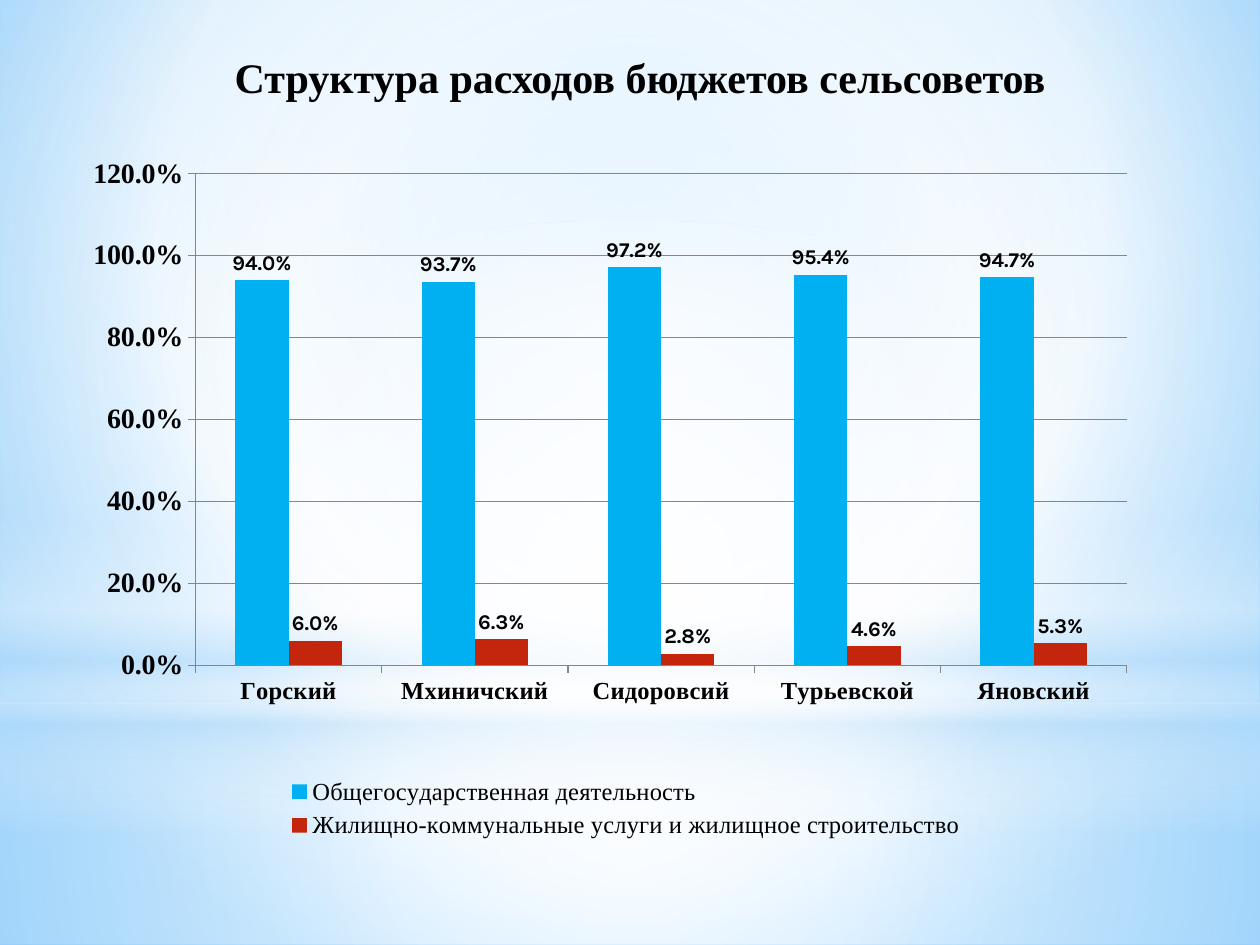
from dataclasses import dataclass

import pptx
import pptx.chart.data
import pptx.dml.color
import pptx.enum.chart
import pptx.enum.shapes
import pptx.enum.text
import pptx.oxml
import pptx.oxml.ns
import pptx.util
from pptx.util import Inches

qn = pptx.oxml.ns.qn


@dataclass(frozen=True)
class Theme:
    serif: str = "Times New Roman"
    sans: str = "Karla"
    ink: str = "000000"
    grid: str = "868686"
    bars: tuple = ("00B0F0", "C3260C")
    white: str = "FFFFFF"
    pale: str = "B4DCFA"
    sky: str = "9ED5FF"
    deep: str = "5BB9FF"
    head: int = 24
    scale: int = 16
    label: int = 14
    value: int = 12
    base: int = 10


THEME = Theme()
PERCENT = "0.0%"
NAMES = ["Горский", "Мхиничский", "Сидоровсий", "Турьевской", "Яновский"]
SERIES = {
    "Общегосударственная деятельность": (0.94, 0.937, 0.972, 0.954, 0.947),
    "Жилищно-коммунальные услуги и жилищное строительство":
        (0.06, 0.063, 0.028, 0.046, 0.053),
}


def rgb(code):
    return pptx.dml.color.RGBColor.from_string(code)


def set_font(font, size, bold=False, name=THEME.serif):
    font.size = pptx.util.Pt(size)
    font.bold = bold
    font.name = name
    font.color.rgb = rgb(THEME.ink)


def fade(fill, root, stops, center=None):
    """Fill with (percent, colour, opacity) stops: round if center is given, else top down."""
    fill.solid()
    marks = "".join(
        f'<a:gs pos="{pos * 1000}"><a:srgbClr val="{code}">'
        f'<a:alpha val="{alpha * 1000}"/></a:srgbClr></a:gs>'
        for pos, code, alpha in stops)
    if center:
        sides = " ".join(f'{side}="{part * 1000}"' for side, part in zip("ltrb", center))
        way = f'<a:path path="circle"><a:fillToRect {sides}/></a:path>'
    else:
        way = '<a:lin ang="5400000" scaled="0"/>'
    grad = pptx.oxml.parse_xml(
        f'<a:gradFill {pptx.oxml.ns.nsdecls("a")} rotWithShape="1">'
        f'<a:gsLst>{marks}</a:gsLst>{way}</a:gradFill>')
    old = root.find(".//" + qn("a:solidFill"))
    old.getparent().replace(old, grad)


def add_glow(slide, kind, box, stops, center=None):
    shape = slide.shapes.add_shape(kind, *map(Inches, box))
    shape.shadow.inherit = False
    fade(shape.fill, shape.element, stops, center)
    shape.line.fill.background()


def add_sky(slide):
    t = THEME
    kinds = pptx.enum.shapes.MSO_SHAPE
    mid = (50, 50, 50, 50)
    fade(slide.background.fill, slide.element,
         [(0, t.sky, 100), (60, t.white, 100), (100, t.deep, 100)], (20, 10, 20, 60))
    add_glow(slide, kinds.RECTANGLE, (0, 5.58, 10, 1.92),
             [(0, t.white, 91), (37, t.white, 76), (100, t.pale, 79)], mid)
    add_glow(slide, kinds.RECTANGLE, (0, 0, 10, 5.58),
             [(0, t.white, 89), (48, t.white, 62), (100, t.pale, 79)], mid)
    add_glow(slide, kinds.RECTANGLE, (0, 4.12, 10, 2.5),
             [(0, t.white, 0), (29, t.white, 30), (45, t.pale, 40),
              (55, t.white, 26), (65, t.pale, 60), (100, t.white, 0)])
    add_glow(slide, kinds.OVAL, (0, 1.75, 10, 5.58),
             [(0, t.white, 100), (56, t.white, 0)], mid)


def place(part, index, box, inner=False):
    """Give a chart part a fixed box, in fractions of the chart."""
    for old in part.findall(qn("c:layout")):
        part.remove(old)
    target = '<c:layoutTarget val="inner"/>' if inner else ""
    modes = "".join(f'<c:{key}Mode val="edge"/>' for key in "xy")
    sizes = "".join(f'<c:{key} val="{val}"/>' for key, val in zip("xywh", box))
    part.insert(index, pptx.oxml.parse_xml(
        f'<c:layout {pptx.oxml.ns.nsdecls("c")}><c:manualLayout>'
        f'{target}{modes}{sizes}</c:manualLayout></c:layout>'))


def style_axis(axis, size):
    axis.major_tick_mark = pptx.enum.chart.XL_TICK_MARK.OUTSIDE
    axis.format.line.color.rgb = rgb(THEME.grid)
    set_font(axis.tick_labels.font, size, True)


def add_bars(slide):
    enums = pptx.enum.chart
    data = pptx.chart.data.CategoryChartData(number_format=PERCENT)
    data.categories = NAMES
    for name, vals in SERIES.items():
        data.add_series(name, vals)
    box = map(Inches, (0.35, 0.99, 9.24, 6.5))
    chart = slide.shapes.add_chart(enums.XL_CHART_TYPE.COLUMN_CLUSTERED, *box, data).chart
    set_font(chart.font, THEME.base, name=THEME.sans)
    chart.has_title = False

    plot = chart.plots[0]
    plot.gap_width, plot.overlap, plot.vary_by_categories = 150, 0, False
    for series, code in zip(plot.series, THEME.bars):
        series.format.fill.solid()
        series.format.fill.fore_color.rgb = rgb(code)
        labels = series.data_labels
        labels.show_value = True
        labels.number_format = PERCENT
        labels.number_format_is_linked = False
        labels.position = enums.XL_LABEL_POSITION.OUTSIDE_END
        set_font(labels.font, THEME.value, True, THEME.sans)

    style_axis(chart.category_axis, THEME.label)
    scale = chart.value_axis
    style_axis(scale, THEME.scale)
    scale.minimum_scale, scale.maximum_scale, scale.major_unit = 0, 1.2, 0.2
    scale.tick_labels.number_format = PERCENT
    scale.tick_labels.number_format_is_linked = False
    scale.major_gridlines.format.line.color.rgb = rgb(THEME.grid)

    chart.has_legend = True
    legend = chart.legend
    legend.position = enums.XL_LEGEND_POSITION.BOTTOM
    legend.include_in_layout = False
    set_font(legend.font, THEME.label)
    root = chart.element
    place(root.find(".//" + qn("c:plotArea")), 0, (0.13, 0.06, 0.8, 0.6), True)
    place(root.find(".//" + qn("c:legend")), 1, (0.2, 0.79, 0.6, 0.09))


def add_head(slide, text):
    title = slide.shapes.title
    title.left, title.top, title.width, title.height = map(Inches, (0.83, 0.36, 8.5, 0.5))
    frame = title.text_frame
    frame.text = text
    frame.word_wrap = True
    frame.vertical_anchor = pptx.enum.text.MSO_ANCHOR.MIDDLE
    line = frame.paragraphs[0]
    line.alignment = pptx.enum.text.PP_ALIGN.CENTER
    set_font(line.runs[0].font, THEME.head, True)
    # Bring the title in front of the glows.
    title.element.getparent().append(title.element)


def main():
    deck = pptx.Presentation()
    deck.slide_width, deck.slide_height = Inches(10), Inches(7.5)
    slide = deck.slides.add_slide(deck.slide_layouts.get_by_name("Title Only"))
    add_sky(slide)
    add_bars(slide)
    add_head(slide, "Структура расходов бюджетов сельсоветов")
    deck.save("out.pptx")


if __name__ == "__main__":
    main()
